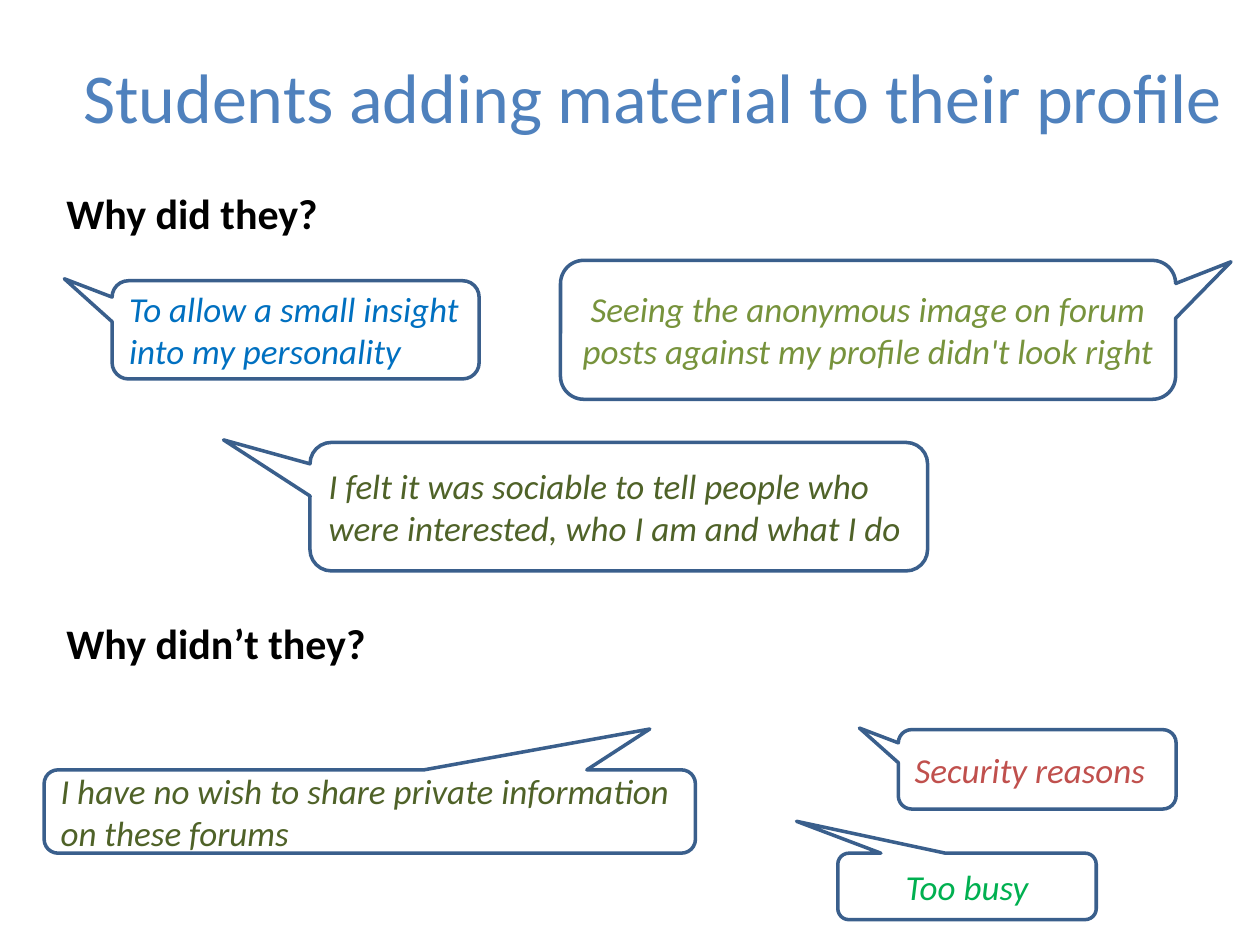
import pptx
import pptx.dml.color
import pptx.enum.shapes
import pptx.enum.text
import pptx.util

Cm = pptx.util.Cm
Pt = pptx.util.Pt
RGBColor = pptx.dml.color.RGBColor
ALIGN = pptx.enum.text.PP_ALIGN
ANCHOR = pptx.enum.text.MSO_ANCHOR

FONT = "Calibri"
TITLE_BLUE = RGBColor(0x4F, 0x81, 0xBD)
BLACK = RGBColor(0, 0, 0)
OUTLINE = RGBColor(0x3A, 0x5F, 0x8C)
BLUE = RGBColor(0x00, 0x70, 0xC0)
DARK_GREEN = RGBColor(0x4F, 0x62, 0x28)
OLIVE = RGBColor(0x77, 0x93, 0x3C)
GREEN = RGBColor(0x00, 0xB0, 0x50)
RED = RGBColor(0xC0, 0x50, 0x4D)

# Content: positions are left, top, width, height in cm
TITLE = "Students adding material to their profile"
TITLE_AREA = (1.3, 0.33, 23.7, 3.18)
QUESTIONS = ["Why did they?", "Why didn’t they?"]
QUESTION_AREA = (1.09, 3.66, 21.46, 13.41)
QUESTION_GAP = Pt(217)

# Quote, area, tail tip relative to the bubble centre, colour, alignment
QUOTES = [
    ("To allow a small insight into my personality",
     (2.26, 5.66, 7.4, 1.98), (-0.63, -0.52), BLUE, ALIGN.LEFT),
    ("I felt it was sociable to tell people who were interested, who I am and what I do",
     (6.25, 8.92, 12.45, 2.59), (-0.64, -0.52), DARK_GREEN, ALIGN.LEFT),
    ("I have no wish to share private information on these forums",
     (0.89, 15.52, 13.13, 1.68), (0.43, -0.99), DARK_GREEN, ALIGN.LEFT),
    ("Seeing the anonymous image on forum posts against my profile didn't look right",
     (11.3, 5.25, 12.4, 2.8), (0.59, -0.49), OLIVE, ALIGN.CENTER),
    ("Too busy",
     (16.89, 17.2, 5.21, 1.34), (-0.66, -0.98), GREEN, ALIGN.CENTER),
    ("Security reasons",
     (18.11, 14.71, 5.6, 1.6), (-0.64, -0.52), RED, ALIGN.LEFT),
]


def lengths(area):
    return [Cm(value) for value in area]


def write(shape, lines, size, color, align=ALIGN.LEFT, anchor=ANCHOR.MIDDLE,
          bold=False, italic=False):
    frame = shape.text_frame
    frame.word_wrap = True
    frame.vertical_anchor = anchor
    frame.text = "\n".join(lines)
    for paragraph in frame.paragraphs:
        paragraph.alignment = align
        for span in paragraph.runs:
            span.font.name = FONT
            span.font.size = Pt(size)
            span.font.bold = bold
            span.font.italic = italic
            span.font.color.rgb = color
    return frame


deck = pptx.Presentation()
deck.slide_width, deck.slide_height = Cm(25.4), Cm(19.05)
page = deck.slides.add_slide(deck.slide_layouts[6])

# Title
title = page.shapes.add_textbox(*lengths(TITLE_AREA))
write(title, [TITLE], 40, TITLE_BLUE, ALIGN.CENTER)

# The two questions, with room for the answers between them
questions = page.shapes.add_textbox(*lengths(QUESTION_AREA))
frame = write(questions, QUESTIONS, 24, BLACK, anchor=ANCHOR.TOP, bold=True)
frame.paragraphs[1].space_before = QUESTION_GAP

# Speech bubbles
for quote, area, tail, color, align in QUOTES:
    bubble = page.shapes.add_shape(
        pptx.enum.shapes.MSO_SHAPE.ROUNDED_RECTANGULAR_CALLOUT, *lengths(area))
    bubble.adjustments[0], bubble.adjustments[1] = tail
    bubble.shadow.inherit = False
    bubble.fill.background()
    bubble.line.color.rgb = OUTLINE
    bubble.line.width = Pt(2)
    write(bubble, [quote], 20, color, align, italic=True)

deck.save("out.pptx")
